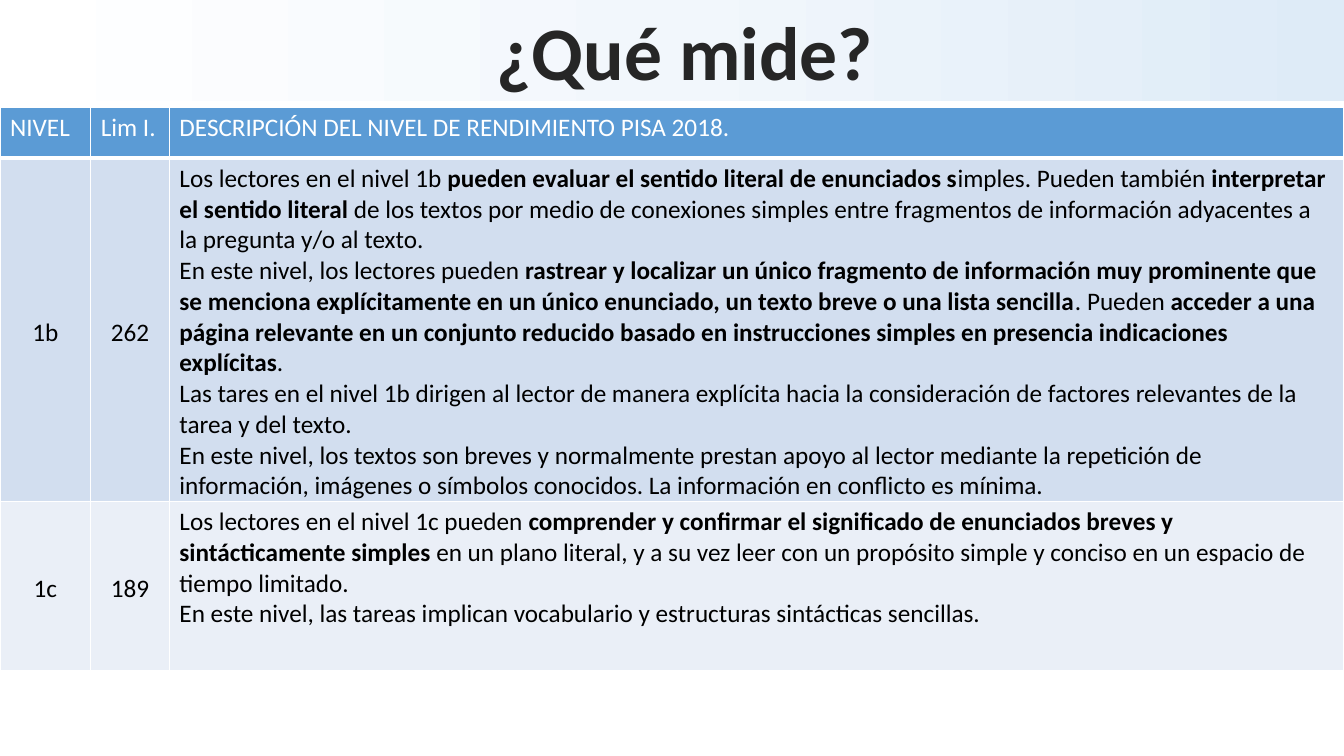
from copy import deepcopy

from lxml.etree import SubElement
from pptx import Presentation
from pptx.dml.color import RGBColor
from pptx.enum.shapes import MSO_SHAPE
from pptx.enum.text import MSO_ANCHOR, MSO_AUTO_SIZE, PP_ALIGN
from pptx.oxml.ns import qn
from pptx.util import Inches, Pt

COLORS = {
    "white": "FFFFFF", "pale": "F2F7FC", "sky": "DEEBF7",
    "head": "5B9BD5", "band": "D2DEEF", "light": "EAEFF7",
    "title": "262626", "text": "000000",
}
HEADS = ["NIVEL", "Lim I.", "DESCRIPCIÓN DEL NIVEL DE RENDIMIENTO PISA 2018."]

# Each paragraph alternates plain and bold runs, plain first.
LEVELS = [
    ("1b", "262", "band", [
        ["Los lectores en el nivel 1b ",
         "pueden evaluar el sentido literal de enunciados s",
         "imples. Pueden también ",
         "interpretar el sentido literal ",
         "de los textos por medio de conexiones simples entre fragmentos de "
         "información adyacentes a la pregunta y/o al texto."],
        ["En este nivel, los lectores pueden ",
         "rastrear y localizar un único fragmento de información muy prominente "
         "que se menciona explícitamente en un único enunciado, un texto breve "
         "o una lista sencilla",
         ". Pueden ",
         "acceder a una página relevante en un conjunto reducido basado en "
         "instrucciones simples en presencia indicaciones explícitas",
         "."],
        ["Las tares en el nivel 1b dirigen al lector de manera explícita hacia "
         "la consideración de factores relevantes de la tarea y del texto."],
        ["En este nivel, los textos son breves y normalmente prestan apoyo al "
         "lector mediante la repetición de información, imágenes o símbolos "
         "conocidos. La información en conflicto es mínima."],
    ]),
    ("1c", "189", "light", [
        ["Los lectores en el nivel 1c pueden ",
         "comprender y confirmar el significado de enunciados breves y "
         "sintácticamente simples",
         " en un plano literal, y a su vez leer con un propósito simple y "
         "conciso en un espacio de tiempo limitado."],
        ["En este nivel, las tareas implican vocabulario y estructuras "
         "sintácticas sencillas."],
    ]),
]


def rgb(name):
    return RGBColor.from_string(COLORS[name])


def stroke(props, tag, width):
    """Add a white line element to run or cell properties."""
    line = SubElement(props, qn(tag), w=str(Pt(width)))
    fill = SubElement(line, qn("a:solidFill"))
    SubElement(fill, qn("a:srgbClr"), val=COLORS["white"])


class Page:
    """Holds the text style and the current slide."""
    font = "Calibri"
    size = 18

    def __init__(self, deck):
        self.slide = deck.slides.add_slide(deck.slide_layouts[6])

    def run(self, para, text, color, bold=False, size=None):
        run = para.add_run()
        run.text = text
        font = run.font
        font.name, font.size, font.bold = self.font, Pt(size or self.size), bold
        font.color.rgb = rgb(color)
        return run

    def band(self, width, height):
        """Draw the header strip, fading from white to sky blue."""
        shape = self.slide.shapes.add_shape(
            MSO_SHAPE.RECTANGLE, 0, 0, Inches(width), Inches(height))
        shape.shadow.inherit = False
        shape.line.fill.background()
        shape.fill.gradient()
        shape.fill.gradient_angle = 180
        first = shape._element.spPr.find(".//" + qn("a:gs"))
        first.addnext(deepcopy(first))
        names = ("sky", "pale", "white")
        for stop, name, pos in zip(shape.fill.gradient_stops, names, (0, 0.5, 1)):
            stop.color.rgb = rgb(name)
            stop.position = pos

    def title(self, text, left, top, width, height):
        box = self.slide.shapes.add_textbox(*map(Inches, (left, top, width, height)))
        frame = box.text_frame
        frame.word_wrap = False
        frame.auto_size = MSO_AUTO_SIZE.SHAPE_TO_FIT_TEXT
        para = frame.paragraphs[0]
        para.alignment = PP_ALIGN.CENTER
        run = self.run(para, text, "title", True, 54)
        props = run.font._element
        stroke(props, "a:ln", 1.06)
        props.insert(0, props[-1])

    def grid(self, left, top, cols, rows):
        frame = self.slide.shapes.add_table(
            len(rows), len(cols), Inches(left), Inches(top),
            Inches(sum(cols)), Inches(sum(rows)))
        table = frame.table
        table.horz_banding = False
        for col, width in zip(table.columns, cols):
            col.width = Inches(width)
        for row, height in zip(table.rows, rows):
            row.height = Inches(height)
        return table

    def cell(self, cell, paras, fill, color="text", center=False, base=1):
        props = cell._tc.get_or_add_tcPr()
        for side, width in zip("LRTB", (1, 1, 1, base)):
            stroke(props, "a:ln" + side, width)
        cell.fill.solid()
        cell.fill.fore_color.rgb = rgb(fill)
        cell.margin_bottom = 0
        if center:
            cell.vertical_anchor = MSO_ANCHOR.MIDDLE
        frame = cell.text_frame
        for i, parts in enumerate(paras):
            para = frame.add_paragraph() if i else frame.paragraphs[0]
            if center:
                para.alignment = PP_ALIGN.CENTER
            for j, text in enumerate(parts):
                self.run(para, text, color, bold=j % 2 == 1)


def main():
    deck = Presentation()
    deck.slide_width, deck.slide_height = Inches(13.33), Inches(7.5)
    page = Page(deck)
    page.band(13.33, 1)
    table = page.grid(0, 1.07, [0.9, 0.78, 11.65], [0.5, 3.4, 1.68])
    for col, head in enumerate(HEADS):
        page.cell(table.cell(0, col), [[head]], "head", "white", base=3)
    for row, (level, limit, fill, paras) in enumerate(LEVELS, 1):
        page.cell(table.cell(row, 0), [[level]], fill, center=True)
        page.cell(table.cell(row, 1), [[limit]], fill, center=True)
        page.cell(table.cell(row, 2), paras, fill)
    page.title("¿Qué mide?", 4.81, 0, 3.97, 1.01)
    deck.save("out.pptx")


if __name__ == "__main__":
    main()
